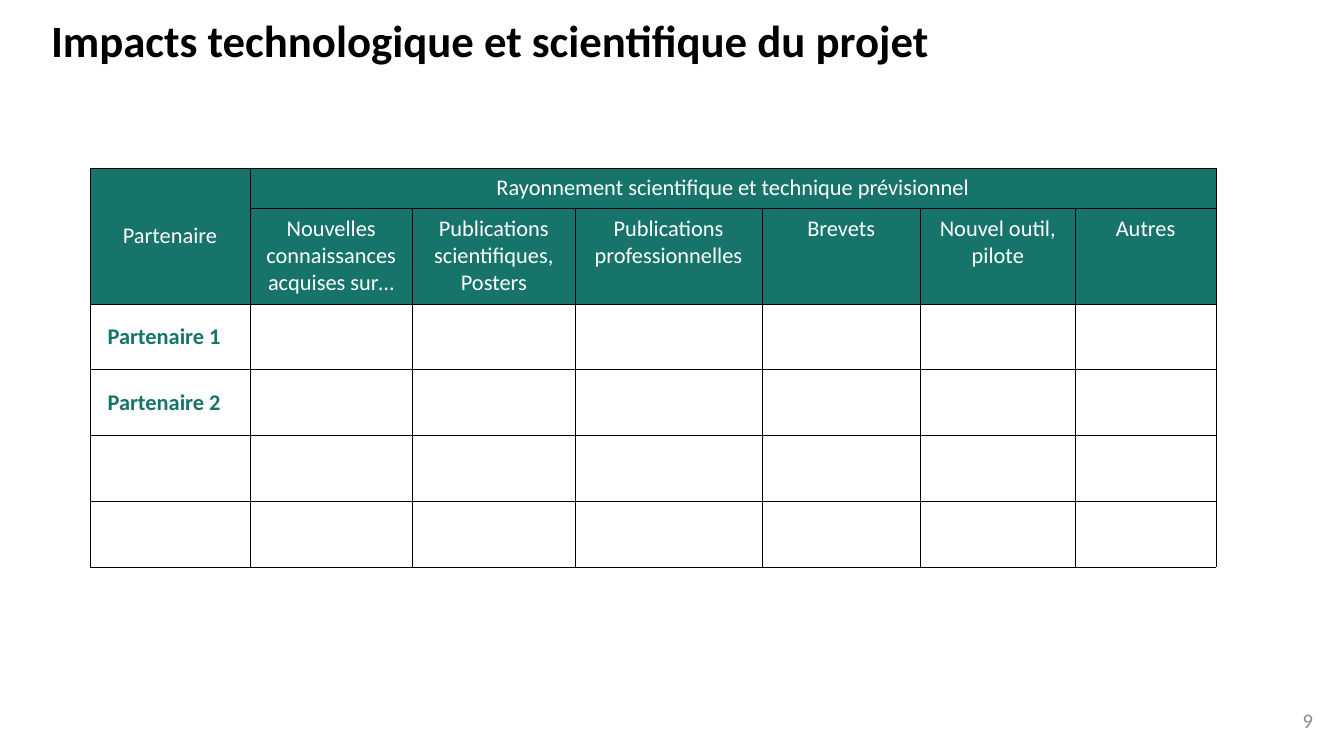
from dataclasses import dataclass

from lxml.etree import SubElement
from pptx import Presentation
from pptx.dml.color import RGBColor
from pptx.enum.text import MSO_ANCHOR, PP_ALIGN
from pptx.oxml.ns import qn
from pptx.util import Inches, Pt


@dataclass(frozen=True)
class Theme:
    font: str = "Calibri"
    black: str = "000000"
    white: str = "FFFFFF"
    green: str = "17746A"
    grey: str = "8C8C8C"
    title_size: int = 24
    table_size: int = 12
    number_size: int = 11
    border_width: float = 0.25


THEME = Theme()
SLIDE_WIDTH = 10
SLIDE_HEIGHT = SLIDE_WIDTH * 9 / 16
COLUMN_WIDTHS = [1.19, 1.21, 1.21, 1.39, 1.18, 1.15, 1.05]
HEADER_HEIGHTS = [0.3, 0.71]
PARTNER_HEIGHT = 0.49
PARTNER_ROWS = 4
PARTNERS = ["Partenaire 1", "Partenaire 2"]
IMPACTS = [
    "Nouvelles connaissances acquises sur…",
    "Publications scientifiques, Posters",
    "Publications professionnelles",
    "Brevets",
    "Nouvel outil, pilote",
    "Autres",
]


def write_text(frame, text, size, color, bold=False, alignment=PP_ALIGN.LEFT):
    paragraph = frame.paragraphs[0]
    paragraph.text = text
    paragraph.alignment = alignment
    font = paragraph.font
    font.name = THEME.font
    font.size = Pt(size)
    font.bold = bold
    font.color.rgb = RGBColor.from_string(color)
    return paragraph


def add_text_box(slide, left, top, width, height, anchor):
    shape = slide.shapes.add_textbox(Inches(left), Inches(top), Inches(width), Inches(height))
    frame = shape.text_frame
    frame.word_wrap = True
    frame.vertical_anchor = anchor
    frame.margin_left = frame.margin_right = Inches(0.07)
    frame.margin_top = frame.margin_bottom = Inches(0.04)
    return frame


def add_borders(cell):
    properties = cell._tc.get_or_add_tcPr()
    for side in ("a:lnL", "a:lnR", "a:lnT", "a:lnB"):
        line = SubElement(properties, qn(side), w=str(Pt(THEME.border_width)))
        fill = SubElement(line, qn("a:solidFill"))
        SubElement(fill, qn("a:srgbClr"), val=THEME.black)


def write_header(cell, text, anchor=MSO_ANCHOR.TOP):
    cell.vertical_anchor = anchor
    write_text(cell.text_frame, text, THEME.table_size, THEME.white, alignment=PP_ALIGN.CENTER)


def write_partner(cell, name):
    cell.vertical_anchor = MSO_ANCHOR.MIDDLE
    cell.margin_left = Inches(0.13)
    cell.margin_right = cell.margin_top = Inches(0.01)
    cell.margin_bottom = 0
    write_text(cell.text_frame, name, THEME.table_size, THEME.green, bold=True)


def add_impact_table(slide):
    heights = HEADER_HEIGHTS + [PARTNER_HEIGHT] * PARTNER_ROWS
    table = slide.shapes.add_table(
        len(heights), len(COLUMN_WIDTHS), Inches(0.67), Inches(1.25),
        Inches(sum(COLUMN_WIDTHS)), Inches(sum(heights)),
    ).table
    table.first_row = table.horz_banding = False
    for column, width in zip(table.columns, COLUMN_WIDTHS):
        column.width = Inches(width)
    for row_index, (row, height) in enumerate(zip(table.rows, heights)):
        row.height = Inches(height)
        for cell in row.cells:
            add_borders(cell)
            if row_index < len(HEADER_HEIGHTS):
                cell.fill.solid()
                cell.fill.fore_color.rgb = RGBColor.from_string(THEME.green)
            else:
                cell.fill.background()

    table.cell(0, 0).merge(table.cell(1, 0))
    table.cell(0, 1).merge(table.cell(0, len(IMPACTS)))
    write_header(table.cell(0, 0), "Partenaire", MSO_ANCHOR.MIDDLE)
    write_header(table.cell(0, 1), "Rayonnement scientifique et technique prévisionnel")
    for column_index, impact in enumerate(IMPACTS, start=1):
        write_header(table.cell(1, column_index), impact)
    for row_index, partner in enumerate(PARTNERS, start=len(HEADER_HEIGHTS)):
        write_partner(table.cell(row_index, 0), partner)


def main():
    presentation = Presentation()
    presentation.slide_width = Inches(SLIDE_WIDTH)
    presentation.slide_height = Inches(SLIDE_HEIGHT)
    slide = presentation.slides.add_slide(presentation.slide_layouts[6])

    title_frame = add_text_box(slide, 0.31, 0.1, 8, 0.48, MSO_ANCHOR.TOP)
    title = write_text(title_frame, "Impacts technologique et scientifique du projet",
                       THEME.title_size, THEME.black, bold=True)
    title.line_spacing = 0.9

    number_frame = add_text_box(slide, 7.59, 5.21, 2.25, 0.3, MSO_ANCHOR.MIDDLE)
    write_text(number_frame, "9", THEME.number_size, THEME.grey, alignment=PP_ALIGN.RIGHT)

    add_impact_table(slide)
    presentation.save("out.pptx")


if __name__ == "__main__":
    main()
